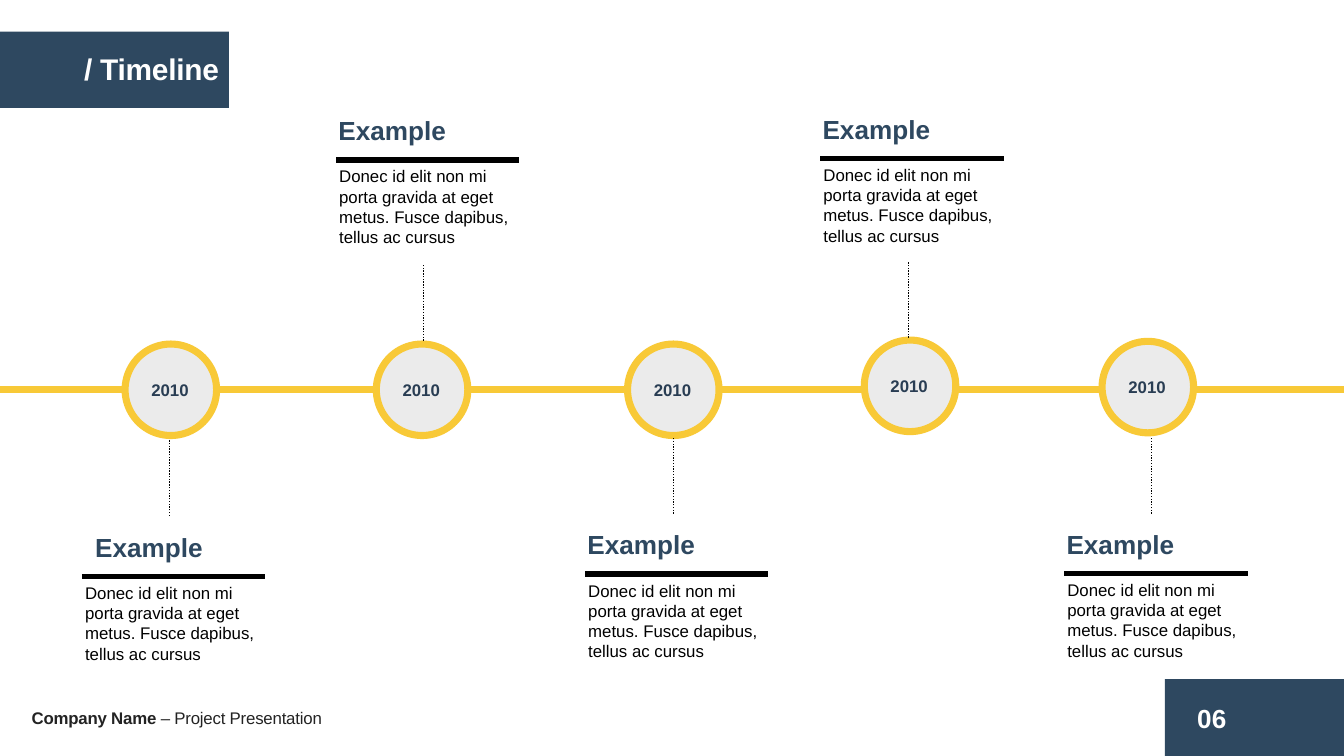
from dataclasses import dataclass

from lxml import etree
from pptx import Presentation
from pptx.dml.color import RGBColor
from pptx.enum.dml import MSO_LINE
from pptx.enum.shapes import MSO_CONNECTOR, MSO_SHAPE
from pptx.enum.text import MSO_AUTO_SIZE, PP_ALIGN
from pptx.oxml.ns import qn
from pptx.slide import Slide
from pptx.text.text import _Paragraph
from pptx.util import Pt

RECT, OVAL = MSO_SHAPE.RECTANGLE, MSO_SHAPE.OVAL
STRAIGHT = MSO_CONNECTOR.STRAIGHT
DOTTED = MSO_LINE.ROUND_DOT
GROW = MSO_AUTO_SIZE.SHAPE_TO_FIT_TEXT
LEFT, CENTER = PP_ALIGN.LEFT, PP_ALIGN.CENTER

NAVY = RGBColor(0x2E, 0x48, 0x60)
YEAR_NAVY = RGBColor(0x29, 0x3D, 0x53)
YELLOW = RGBColor(0xF8, 0xC9, 0x37)
GREY = RGBColor(0xEB, 0xEB, 0xEB)
INK = RGBColor(0x23, 0x23, 0x23)
BLACK = RGBColor(0, 0, 0)
WHITE = RGBColor(0xFF, 0xFF, 0xFF)

WIDTH, HEIGHT = 720, 405
AXIS_Y = 208.8
CIRCLE = 49
RULE_LENGTH = 98.3
STEM_LENGTH = 41
TIGHT = "-10"
BODY = ("Donec id elit non mi porta gravida at eget metus. "
        "Fusce dapibus, tellus ac cursus")


@dataclass(frozen=True)
class Milestone:
    """Circle corner, card rule start and stem top, in points."""
    circle_x: float
    circle_y: float
    rule_x: float
    rule_y: float
    stem_x: float
    stem_y: float
    heading_dx: float = -5.8
    year: str = "2010"
    heading: str = "Example"
    body: str = BODY


MILESTONES = [
    Milestone(67, 184.3, 43.9, 308.9, 90.9, 235.4, heading_dx=0),
    Milestone(201.6, 184.3, 180, 85.7, 226.8, 141.5),
    Milestone(336.2, 184.3, 313.4, 307.6, 360.7, 234.2),
    Milestone(463, 182.2, 439.4, 85, 486.7, 140),
    Milestone(590.4, 182.9, 570.1, 307.3, 617, 234.2),
]


def add_text(s: Slide, x: float, y: float, w: float, h: float, text: str,
             size: float, color: RGBColor, bold: bool = False,
             align: PP_ALIGN = LEFT) -> _Paragraph:
    tf = s.shapes.add_textbox(Pt(x), Pt(y), Pt(w), Pt(h)).text_frame
    tf.word_wrap = True
    tf.auto_size = GROW
    p = tf.paragraphs[0]
    p.add_run().text = text
    p.alignment = align
    p.font.name = "Arial"
    p.font.size = Pt(size)
    p.font.bold = bold
    p.font.color.rgb = color
    return p


def tighten(p: _Paragraph) -> None:
    """Bring the letters of every run slightly closer together."""
    for r in p.runs:
        r._r.get_or_add_rPr().set("spc", TIGHT)


def add_filled(s: Slide, kind: MSO_SHAPE, x: float, y: float, w: float,
               h: float, fill: RGBColor, border: RGBColor | None = None) -> None:
    sp = s.shapes.add_shape(kind, Pt(x), Pt(y), Pt(w), Pt(h))
    sp.shadow.inherit = False
    sp.fill.solid()
    sp.fill.fore_color.rgb = fill
    if border is None:
        sp.line.fill.background()
    else:
        sp.line.color.rgb = border
        sp.line.width = Pt(3.8)


def add_line(s: Slide, x1: float, y1: float, x2: float, y2: float,
             color: RGBColor, width: float, dash: MSO_LINE | None = None) -> None:
    line = s.shapes.add_connector(STRAIGHT, Pt(x1), Pt(y1), Pt(x2), Pt(y2))
    line.line.color.rgb = color
    line.line.width = Pt(width)
    if dash is not None:
        line.line.dash_style = dash
    etree.SubElement(line._element.spPr, qn("a:effectLst"))


def add_milestone(s: Slide, m: Milestone) -> None:
    add_text(s, m.rule_x - 5.4, m.rule_y - 0.3, 109.4, 51.1, m.body, 9, BLACK)
    add_text(s, m.rule_x + m.heading_dx, m.rule_y - 28, 88.6, 24.5,
             m.heading, 14, NAVY, bold=True)
    add_line(s, m.rule_x, m.rule_y, m.rule_x + RULE_LENGTH, m.rule_y, BLACK, 3)
    add_filled(s, OVAL, m.circle_x, m.circle_y, CIRCLE, CIRCLE, GREY, YELLOW)
    add_text(s, m.circle_x + 6.4, m.circle_y + 15.6, 35.3, 18,
             m.year, 9, YEAR_NAVY, bold=True, align=CENTER)
    add_line(s, m.stem_x, m.stem_y + STEM_LENGTH, m.stem_x, m.stem_y,
             BLACK, 0.75, DOTTED)


def add_frame(s: Slide) -> None:
    """Add the title tab, the footer and the page number."""
    footer = add_text(s, 9.9, 375.4, 232.6, 18, "Company Name ", 9, INK)
    footer.runs[0].font.bold = True
    footer.add_run().text = "– Project Presentation"
    tighten(footer)

    add_filled(s, RECT, 624, 363.8, 96, 42.2, NAVY)
    add_text(s, 634.3, 372.6, 36, 24.5, "06", 14, WHITE, bold=True)

    add_filled(s, RECT, 0, 17, 122.6, 40.8, NAVY)
    tighten(add_text(s, 38, 23.8, 88.6, 26.6, "/ Timeline", 16, WHITE, bold=True))


def main() -> None:
    prs = Presentation()
    prs.slide_width, prs.slide_height = Pt(WIDTH), Pt(HEIGHT)
    s = prs.slides.add_slide(prs.slide_layouts[6])
    add_frame(s)
    add_line(s, 0, AXIS_Y, WIDTH, AXIS_Y, YELLOW, 3.5)
    for milestone in MILESTONES:
        add_milestone(s, milestone)
    prs.save("out.pptx")


if __name__ == "__main__":
    main()
